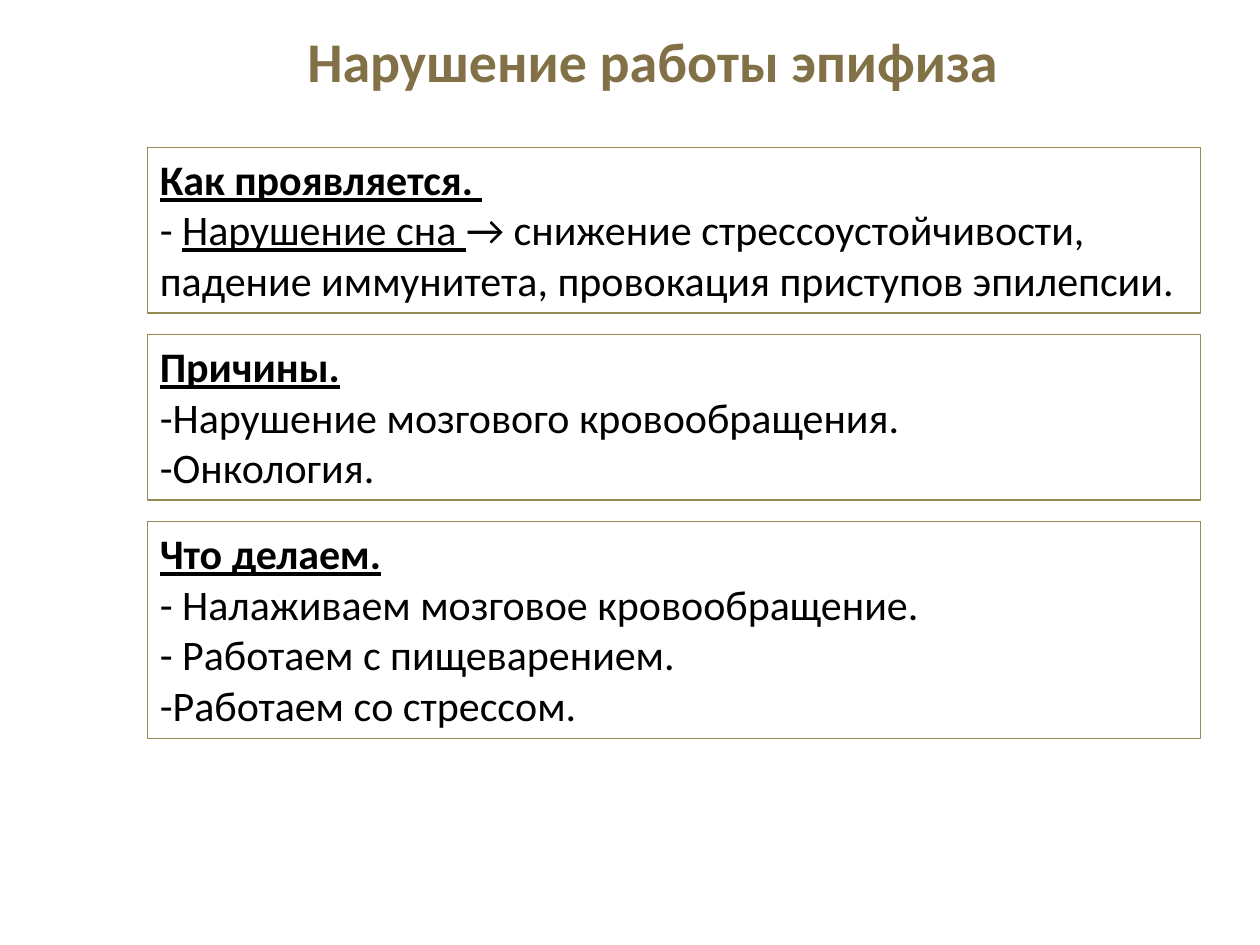
from pptx import Presentation
from pptx.dml.color import RGBColor
from pptx.enum.shapes import MSO_SHAPE as Shape
from pptx.enum.text import MSO_ANCHOR as Anchor, MSO_AUTO_SIZE as AutoSize, PP_ALIGN as Align
from pptx.util import Inches, Pt

TITLE_COLOR, BORDER, INK = "827146", "948A54", "000000"
LINE_HEIGHT, PADDING, GAP = 0.405, 0.1, 0.17

# Each section: heading, then lines made of (text, underlined) pieces
SECTIONS = [
    ("Как проявляется. ", 3, [
        [("- ", False), ("Нарушение сна ", True),
         ("→ снижение стрессоустойчивости, падение иммунитета, "
          "провокация приступов эпилепсии.", False)],
    ]),
    ("Причины.", 3, [
        [("-Нарушение мозгового кровообращения.", False)],
        [("-Онкология.", False)],
    ]),
    ("Что делаем.", 4, [
        [("- Налаживаем мозговое кровообращение.", False)],
        [("- Работаем с пищеварением.", False)],
        [("-Работаем со стрессом.", False)],
    ]),
]


def color(value):
    return RGBColor.from_string(value)


def add_text(paragraph, text, size=24, ink=INK, bold=False, underline=False):
    run = paragraph.add_run()
    run.text = text
    font = run.font
    font.name, font.size = "Calibri", Pt(size)
    font.bold, font.underline = bold, underline
    font.color.rgb = color(ink)


def add_title(slide, left, top, width, height):
    title = slide.shapes.add_textbox(Inches(left), Inches(top), Inches(width), Inches(height))
    frame = title.text_frame
    frame.word_wrap = False
    frame.auto_size = AutoSize.SHAPE_TO_FIT_TEXT
    add_text(frame.paragraphs[0], "Нарушение работы эпифиза", size=32, ink=TITLE_COLOR, bold=True)


def add_section(slide, left, top, width, height, heading, lines):
    panel = slide.shapes.add_shape(Shape.RECTANGLE, Inches(left), Inches(top),
                                   Inches(width), Inches(height))
    panel.shadow.inherit = False
    panel.fill.background()
    panel.line.color.rgb = color(BORDER)
    panel.line.width = Pt(0.75)

    frame = panel.text_frame
    frame.word_wrap = True
    frame.auto_size = AutoSize.SHAPE_TO_FIT_TEXT
    frame.vertical_anchor = Anchor.TOP
    paragraph = frame.paragraphs[0]
    paragraph.alignment = Align.LEFT
    add_text(paragraph, heading, bold=True, underline=True)
    for line in lines:
        paragraph.add_line_break()
        for text, underline in line:
            add_text(paragraph, text, underline=underline)


def add_sections(slide, left, top, width):
    for heading, line_count, lines in SECTIONS:
        height = PADDING + LINE_HEIGHT * line_count
        add_section(slide, left, top, width, height, heading, lines)
        top += height + GAP


def main():
    deck = Presentation()
    deck.slide_width, deck.slide_height = Inches(10), Inches(7.5)
    slide = deck.slides.add_slide(deck.slide_layouts[6])
    add_title(slide, 2.34, 0.16, 5.85, 0.64)
    add_sections(slide, 1.17, 1.17, 8.36)
    deck.save("out.pptx")


if __name__ == "__main__":
    main()
